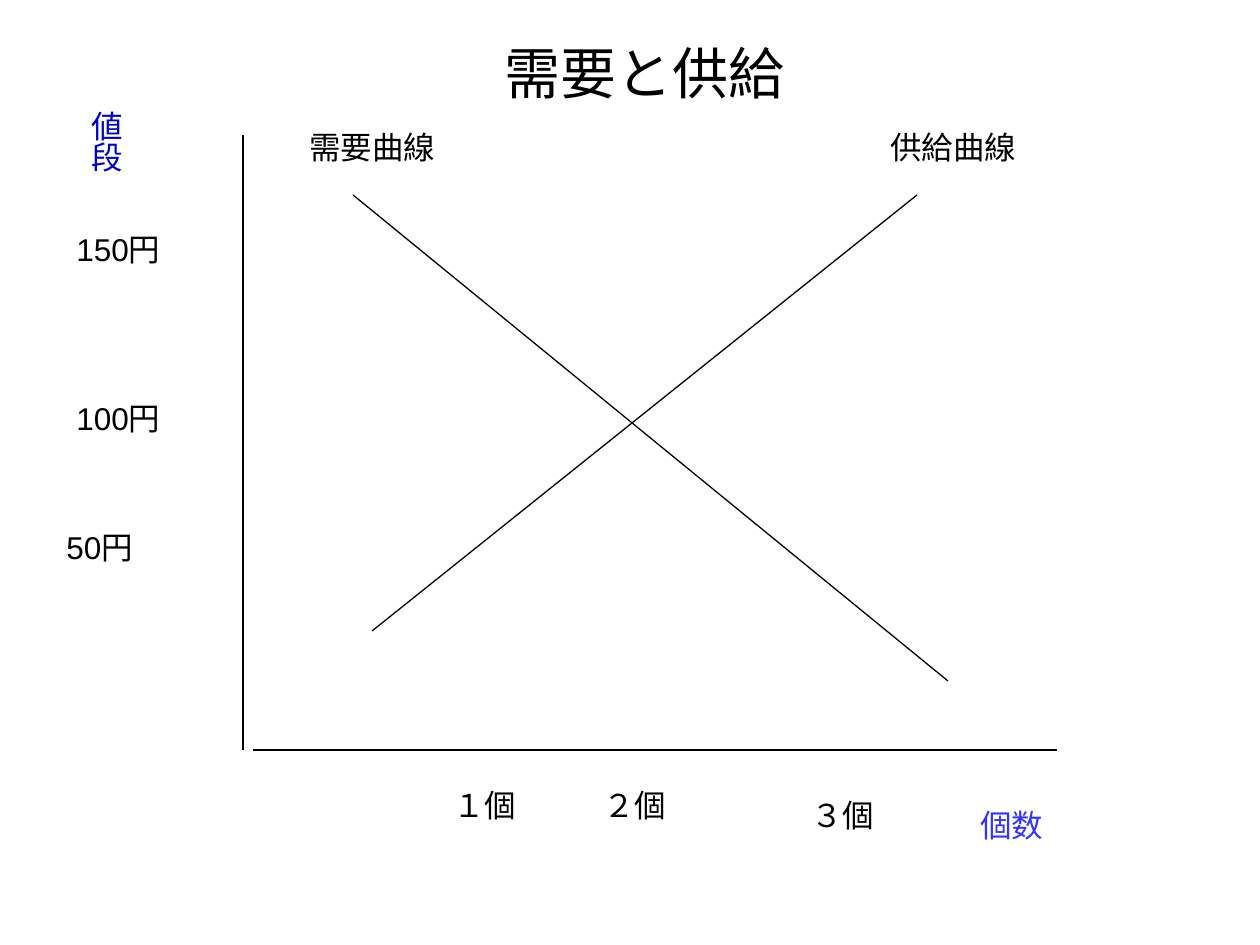
import pptx
import pptx.util
import pptx.dml.color
import pptx.enum.shapes
import pptx.enum.text
import pptx.oxml.ns
import lxml.etree

SCALE = 914400 / 126  # EMU in one px
BLACK = "000000"


def px(*vals):
    return [pptx.util.Emu(round(val * SCALE)) for val in vals]


def color(code):
    return pptx.dml.color.RGBColor.from_string(code)


def style(item, fmt):
    for name, val in fmt.items():
        setattr(item, name, val)


def write(shape, text, size, code):
    frame = shape.text_frame
    frame.text = text
    style(frame, {
        "word_wrap": True,
        "auto_size": pptx.enum.text.MSO_AUTO_SIZE.NONE,
        "vertical_anchor": pptx.enum.text.MSO_ANCHOR.TOP,
    })
    font = frame.paragraphs[0].runs[0].font
    style(font, {"name": "Arial", "size": pptx.util.Pt(size)})
    font.color.rgb = color(code)


def title(slide, text, box):
    shape = slide.shapes.title
    style(shape, dict(zip(("left", "top", "width", "height"), px(*box))))
    write(shape, text, 32, BLACK)
    shape.text_frame.paragraphs[0].alignment = pptx.enum.text.PP_ALIGN.CENTER


def label(slide, text, box, code=BLACK, upright=False):
    shape = slide.shapes.add_textbox(*px(*box))
    write(shape, text, 18, code)
    if upright:
        body = shape.text_frame._txBody.find(pptx.oxml.ns.qn("a:bodyPr"))
        body.set("vert", "eaVert")


def line(slide, ends):
    kind = pptx.enum.shapes.MSO_CONNECTOR.STRAIGHT
    shape = slide.shapes.add_connector(kind, *px(*ends))
    shape.line.color.rgb = color(BLACK)
    shape.line.width = pptx.util.Pt(0.75)
    # No theme shadow
    lxml.etree.SubElement(shape._element.spPr, pptx.oxml.ns.qn("a:effectLst"))


def main():
    deck = pptx.Presentation()
    deck.slide_width, deck.slide_height = px(1260, 945)
    slide = deck.slides.add_slide(deck.slide_layouts[5])
    title(slide, "需要と供給", (441, 32, 407, 81))

    # Axes
    line(slide, (243, 135, 243, 750))
    line(slide, (253, 750, 1057, 750))
    label(slide, "個数", (968, 800, 218, 50), "3333FF")
    label(slide, "値段", (67, 98, 64, 100), "0000CC", True)

    # Supply and demand curves
    line(slide, (372, 631, 917, 195))
    line(slide, (353, 195, 948, 681))
    label(slide, "供給曲線", (878, 122, 287, 50))
    label(slide, "需要曲線", (297, 122, 348, 50))

    # Quantities
    for text, left, top in (("１個", 441, 780), ("２個", 591, 780),
                            ("３個", 799, 790)):
        label(slide, text, (left, top, 149, 50))

    # Prices
    for text, left, top in (("150円", 64, 224), ("100円", 64, 393),
                            ("50円", 54, 522)):
        label(slide, text, (left, top, 149, 50))

    deck.save("out.pptx")


if __name__ == "__main__":
    main()
